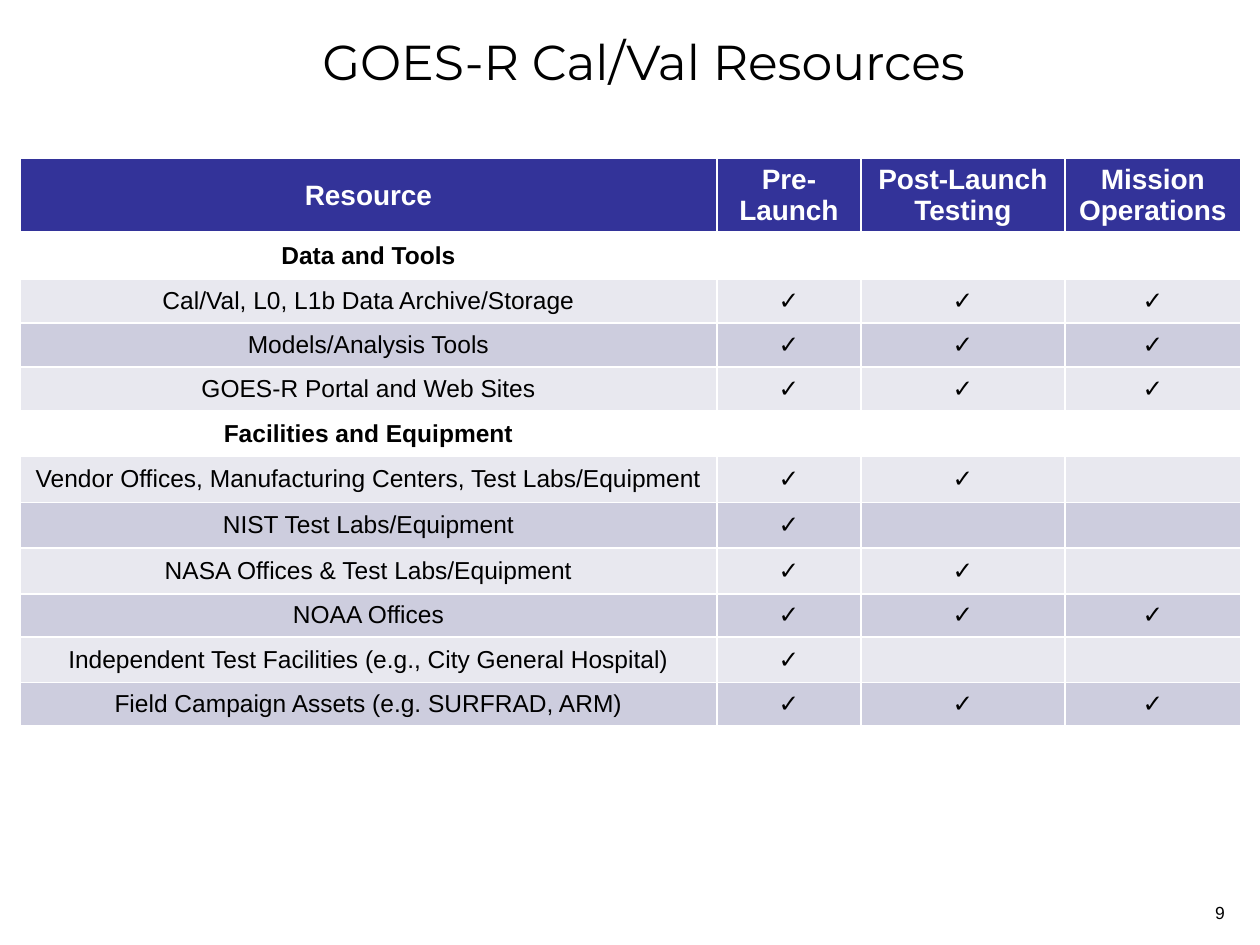
"""Build the GOES-R Cal/Val resources slide."""
from lxml import etree
from pptx import Presentation, util as u
from pptx.dml.color import RGBColor
from pptx.enum import text
from pptx.oxml import ns

COLORS = {
    "header": "333399",
    "light": "E8E8EF",
    "dark": "CDCDDE",
    "white": "FFFFFF",
    "black": "000000",
}
HEADERS = ["Resource", "Pre-Launch", "Post-Launch Testing", "Mission Operations"]
SECTIONS = [
    ("Data and Tools", [
        ("Cal/Val, L0, L1b Data Archive/Storage", 1, 1, 1),
        ("Models/Analysis Tools", 1, 1, 1),
        ("GOES-R Portal and Web Sites", 1, 1, 1),
    ]),
    ("Facilities and Equipment", [
        ("Vendor Offices, Manufacturing Centers, Test Labs/Equipment", 1, 1, 0),
        ("NIST Test Labs/Equipment", 1, 0, 0),
        ("NASA Offices & Test Labs/Equipment", 1, 1, 0),
        ("NOAA Offices", 1, 1, 1),
        ("Independent Test Facilities (e.g., City General Hospital)", 1, 0, 0),
        ("Field Campaign Assets (e.g. SURFRAD, ARM)", 1, 1, 1),
    ]),
]
COL_WIDTHS = [697, 144, 204, 176]
ROW_HEIGHTS = [74] + [44] * 5 + [43] * 6


def px(n):
    return u.Emu(round(n * 914400 / 126))


class Deck:
    def __init__(self, prs, font="Arial"):
        self.font = font
        self.s = prs.slides.add_slide(prs.slide_layouts[6])

    def style(self, p, size, align="CENTER", color="black", bold=False, font=None):
        p.alignment = getattr(text.PP_ALIGN, align)
        for r in p.runs:
            r.font.name = font or self.font
            r.font.size = u.Pt(size)
            r.font.bold = bold
            r.font.color.rgb = RGBColor.from_string(COLORS[color])

    def label(self, box, words, size, anchor="TOP", **look):
        tf = self.s.shapes.add_textbox(*map(px, box)).text_frame
        tf.word_wrap = True
        tf.vertical_anchor = getattr(text.MSO_ANCHOR, anchor)
        tf.text = words
        self.style(tf.paragraphs[0], size, **look)

    def borders(self, cell, bottom=1):
        tc_pr = cell._tc.get_or_add_tcPr()
        for i, (side, width) in enumerate(zip("LRTB", (1, 1, 1, bottom))):
            ln = etree.Element(ns.qn(f"a:ln{side}"), w=str(u.Pt(width)))
            fill = etree.SubElement(ln, ns.qn("a:solidFill"))
            etree.SubElement(fill, ns.qn("a:srgbClr"), val=COLORS["white"])
            tc_pr.insert(i, ln)

    def cell(self, cell, words, size, fill=None, bottom=1, **look):
        cell.text = words
        cell.vertical_anchor = text.MSO_ANCHOR.MIDDLE
        cell.margin_top = cell.margin_bottom = px(4)
        if fill:
            cell.fill.solid()
            cell.fill.fore_color.rgb = RGBColor.from_string(COLORS[fill])
        else:
            cell.fill.background()
        self.borders(cell, bottom)
        self.style(cell.text_frame.paragraphs[0], size, **look)

    def table(self, left, top, widths, heights):
        box = map(px, (left, top, sum(widths), sum(heights)))
        tbl = self.s.shapes.add_table(len(heights), len(widths), *box).table
        tbl.horz_banding = False
        for col, width in zip(tbl.columns, widths):
            col.width = px(width)
        for row, height in zip(tbl.rows, heights):
            row.height = px(height)
        return tbl

    def resources(self, tbl):
        rows = iter(tbl.rows)
        for cell, words in zip(next(rows).cells, HEADERS):
            self.cell(cell, words, 16, "header", 3, color="white", bold=True)
        for section, items in SECTIONS:
            for cell, words in zip(next(rows).cells, [section, "", "", ""]):
                self.cell(cell, words, 14, bold=True)
            for i, (name, *marks) in enumerate(items):
                fill = "dark" if i % 2 else "light"
                words = [name] + ["✓" if mark else "" for mark in marks]
                for j, cell in enumerate(next(rows).cells):
                    self.cell(cell, words[j], 14, fill, bold=j > 0)


def main():
    prs = Presentation()
    prs.slide_width, prs.slide_height = px(1260), px(945)
    deck = Deck(prs)
    deck.label((212, 9, 876, 103), "GOES-R Cal/Val Resources ", 28, "MIDDLE",
               font="Montserrat")
    deck.resources(deck.table(20, 158, COL_WIDTHS, ROW_HEIGHTS))
    deck.label((944, 896, 293, 49), "9", 10, align="RIGHT")
    prs.save("out.pptx")


if __name__ == "__main__":
    main()
